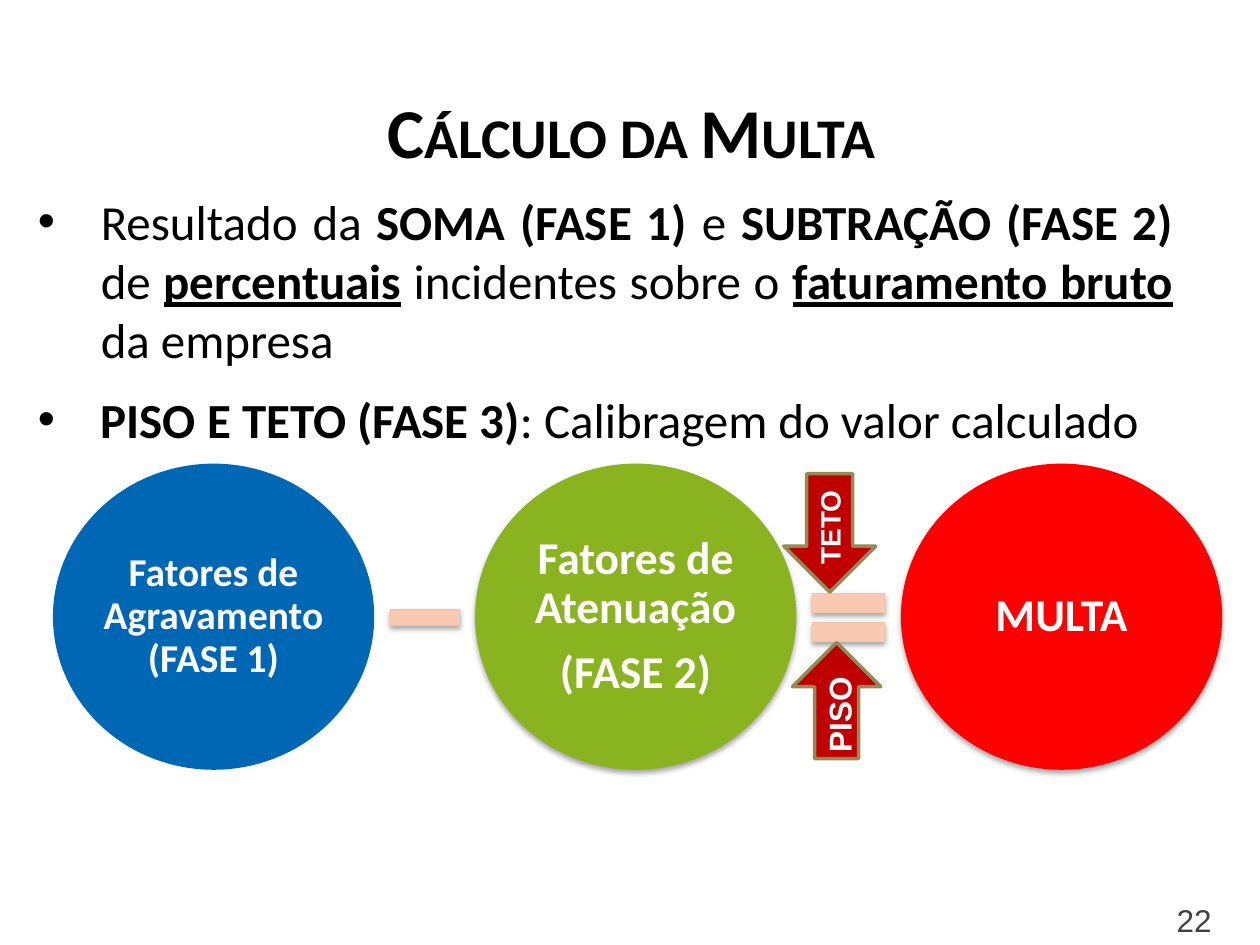
from dataclasses import dataclass

from lxml import etree
from pptx import Presentation
from pptx.dml.color import RGBColor
from pptx.enum import shapes as kinds, text
from pptx.oxml.ns import qn
from pptx.util import Inches, Pt

BLACK = RGBColor(0x00, 0x00, 0x00)
WHITE = RGBColor(0xFF, 0xFF, 0xFF)
GRAY = RGBColor(0x40, 0x40, 0x40)
BLUE = RGBColor(0x00, 0x67, 0xB4)
GREEN = RGBColor(0x89, 0xB3, 0x1F)
RED = RGBColor(0xFE, 0x00, 0x00)
DARK_RED = RGBColor(0xC0, 0x00, 0x00)
OLIVE = RGBColor(0x94, 0x8A, 0x54)
PEACH = RGBColor(0xFA, 0xC9, 0xB1)
PEACH_EDGE = RGBColor(0xF6, 0xC4, 0xAB)

SHAPE = kinds.MSO_SHAPE
CENTER = text.PP_ALIGN.CENTER


@dataclass
class Box:
    left: float
    top: float
    width: float
    height: float

    def lengths(self):
        return [Inches(v) for v in (self.left, self.top, self.width, self.height)]


@dataclass
class Factor:
    left: float
    fill: RGBColor
    paragraphs: list[str]  # "\v" breaks a line
    size: float
    shadow: bool = True


@dataclass
class Limit:
    word: str
    size: int
    arrow_kind: SHAPE
    arrow: Box
    label: Box


FACTORS = [
    Factor(0.42, BLUE, ["Fatores de Agravamento\v(FASE 1)"], 22.5, shadow=False),
    Factor(3.77, GREEN, ["Fatores de Atenuação", "(FASE 2)"], 26),
    Factor(7.15, RED, ["MULTA"], 26),
]
MINUS_BAR = Box(3.1, 4.84, 0.55, 0.12)
EQUALS_BARS = [Box(6.45, top, 0.57, 0.15) for top in (4.71, 4.94)]
LIMITS = [
    Limit("TETO", 16, SHAPE.DOWN_ARROW,
          Box(6.22, 3.76, 0.73, 0.94), Box(6.16, 4, 0.85, 0.37)),
    Limit("PISO", 18, SHAPE.UP_ARROW,
          Box(6.29, 5.1, 0.7, 0.92), Box(6.2, 5.47, 0.92, 0.4)),
]

# Each run is its wording and its style: b for bold, u for underlined
BULLETS = [
    [("Resultado da ", ""), ("SOMA (FASE 1) ", "b"), ("e ", ""),
     ("SUBTRAÇÃO (FASE 2) ", "b"), ("de ", ""), ("percentuais", "bu"),
     (" incidentes sobre o ", ""), ("faturamento bruto", "bu"),
     (" da empresa", "")],
    [("PISO E TETO (FASE 3)", "b"), (": Calibragem do valor calculado", "")],
]


def style_font(font, name: str, size: float, color: RGBColor, bold: bool | None = None):
    font.name, font.size, font.bold = name, Pt(size), bold
    font.color.rgb = color


def place(shape, box: Box):
    shape.left, shape.top, shape.width, shape.height = box.lengths()


def add_soft_shadow(shape):
    effects = shape._element.spPr.find(qn("a:effectLst"))
    shadow = etree.SubElement(effects, qn("a:outerShdw"), blurRad=str(Pt(3.1)),
                              dist=str(Pt(1.8)), dir="5400000", rotWithShape="0")
    color = etree.SubElement(shadow, qn("a:srgbClr"), val="000000")
    etree.SubElement(color, qn("a:alpha"), val="35000")


def add_filled(slide, kind, box: Box, fill: RGBColor, edge: RGBColor | None = None,
               edge_width: float = 0, shadow: bool = False):
    shape = slide.shapes.add_shape(kind, *box.lengths())
    shape.shadow.inherit = False
    shape.fill.solid()
    shape.fill.fore_color.rgb = fill
    if edge is None:
        shape.line.fill.background()
    else:
        shape.line.color.rgb = edge
        shape.line.width = Pt(edge_width)
    if shadow:
        add_soft_shadow(shape)
    return shape


def add_factor(slide, factor: Factor):
    circle = add_filled(slide, SHAPE.OVAL, Box(factor.left, 3.68, 2.55, 2.43),
                        factor.fill, shadow=factor.shadow)
    frame = circle.text_frame
    frame.margin_left = frame.margin_right = Inches(0.03)
    frame.margin_top = frame.margin_bottom = 0
    frame.vertical_anchor = text.MSO_ANCHOR.MIDDLE
    frame.text = "\n".join(factor.paragraphs)
    for paragraph in frame.paragraphs:
        paragraph.alignment = CENTER
        paragraph.line_spacing = 0.9
        paragraph.space_after = Pt(0.35 * factor.size)
        style_font(paragraph.font, "Calibri", factor.size, WHITE, True)


def add_limit(slide, limit: Limit):
    add_filled(slide, limit.arrow_kind, limit.arrow, DARK_RED, OLIVE, 2)
    label = slide.shapes.add_textbox(*limit.label.lengths())
    label.rotation = 270
    label.text_frame.word_wrap = True
    paragraph = label.text_frame.paragraphs[0]
    paragraph.text = limit.word
    paragraph.alignment = CENTER
    style_font(paragraph.font, "Arial", limit.size, WHITE, True)


def fill_title(title):
    place(title, Box(0.02, 0.6, 9.98, 0.87))
    frame = title.text_frame
    frame.auto_size = text.MSO_AUTO_SIZE.NONE
    frame.vertical_anchor = text.MSO_ANCHOR.MIDDLE
    paragraph = frame.paragraphs[0]
    paragraph.alignment = CENTER
    run = paragraph.add_run()
    run.text = "Cálculo da Multa"
    style_font(run.font, "Calibri", 40, BLACK, True)
    run._r.get_or_add_rPr().set("cap", "small")


def fill_bullets(body):
    place(body, Box(0.2, 1.47, 9.21, 2.41))
    frame = body.text_frame
    frame.auto_size = text.MSO_AUTO_SIZE.NONE
    for index, runs in enumerate(BULLETS):
        paragraph = frame.add_paragraph() if index else frame.paragraphs[0]
        paragraph.alignment = text.PP_ALIGN.JUSTIFY
        paragraph.space_before = Pt(6 if index else 0)
        paragraph.space_after = Pt(6)
        properties = paragraph._p.get_or_add_pPr()
        properties.set("marL", str(Inches(0.5)))
        properties.set("indent", str(Inches(-0.5)))
        etree.SubElement(properties, qn("a:buFont"), typeface="Arial")
        etree.SubElement(properties, qn("a:buChar"), char="•")
        style_font(paragraph.font, "Calibri", 28, BLACK)
        for wording, style in runs:
            run = paragraph.add_run()
            run.text = wording
            run.font.bold = "b" in style
            run.font.underline = "u" in style


def add_page_number(slide):
    number = slide.shapes.add_textbox(*Box(9.24, 7.1, 0.48, 0.4).lengths())
    paragraph = number.text_frame.paragraphs[0]
    paragraph.text = "22"
    style_font(paragraph.font, "Arial", 18, GRAY)


def main():
    deck = Presentation()
    deck.slide_width, deck.slide_height = Inches(10), Inches(7.5)
    slide = deck.slides.add_slide(deck.slide_layouts[1])
    fill_title(slide.shapes.title)
    fill_bullets(slide.placeholders[1])
    for factor in FACTORS:
        add_factor(slide, factor)
    for bar in [MINUS_BAR, *EQUALS_BARS]:
        add_filled(slide, SHAPE.RECTANGLE, bar, PEACH, PEACH_EDGE, 0.75, shadow=True)
    for limit in LIMITS:
        add_limit(slide, limit)
    add_page_number(slide)
    deck.save("out.pptx")


if __name__ == "__main__":
    main()
